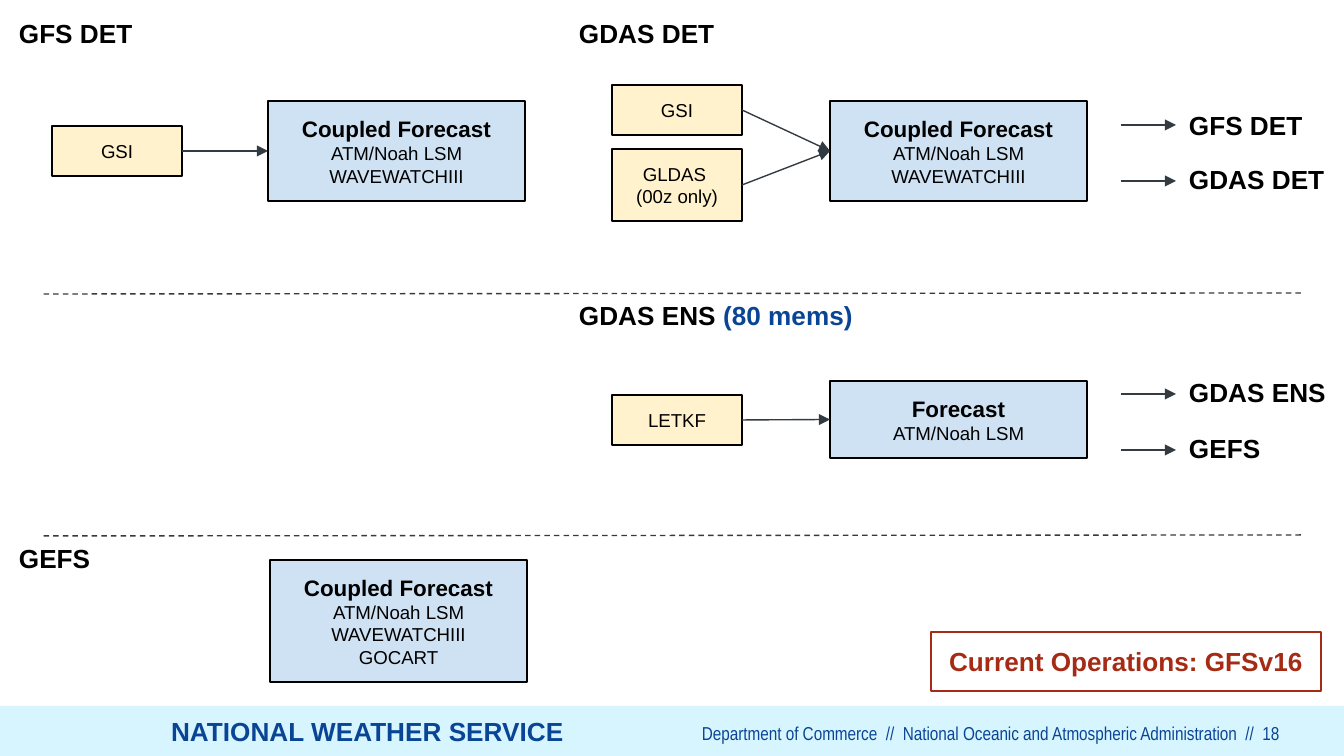
from lxml import etree
from pptx import Presentation
from pptx.dml.color import RGBColor
from pptx.enum.dml import MSO_LINE
from pptx.enum.shapes import MSO_CONNECTOR, MSO_SHAPE
from pptx.enum.text import MSO_ANCHOR, PP_ALIGN
from pptx.oxml.ns import qn
from pptx.util import Pt

EMU_PER_PX = 914400 / 134.4
SLIDE_W, SLIDE_H = 1344, 756
INSET = 13

BLACK = RGBColor(0x00, 0x00, 0x00)
SLATE = RGBColor(0x32, 0x3B, 0x42)
NAVY = RGBColor(0x0A, 0x45, 0x95)
BRICK = RGBColor(0xA5, 0x2B, 0x15)
CREAM = RGBColor(0xFF, 0xF2, 0xCC)
PALE_BLUE = RGBColor(0xCF, 0xE2, 0xF3)
FOOTER_BLUE = RGBColor(0xD6, 0xF5, 0xFF)

HEADING = {"name": "Arial", "size": Pt(14), "bold": True}
MODEL_TITLE = {"name": "Arial", "size": Pt(12), "bold": True}
BODY = {"name": "Arial", "size": Pt(10), "bold": False}
FINE_PRINT = {"name": "Arial Narrow", "size": Pt(10), "bold": False}

LEFT_COLUMN, RIGHT_COLUMN, OUTPUT_COLUMN = 6, 566, 1176
ANALYSIS_W, ANALYSIS_H = 130, 50
MODEL_W = 257
ARROW_START = 1121


def px(length):
    return round(length * EMU_PER_PX)


def write(shape, lines, align=PP_ALIGN.LEFT, anchor=MSO_ANCHOR.TOP, inset=INSET):
    """Fill a shape with lines, each a list of (text, format, colour) runs."""
    frame = shape.text_frame
    layout = {"word_wrap": True, "vertical_anchor": anchor}
    layout |= {f"margin_{side}": px(inset) for side in ("left", "top", "right", "bottom")}
    for key, value in layout.items():
        setattr(frame, key, value)
    for index, line in enumerate(lines):
        paragraph = frame.add_paragraph() if index else frame.paragraphs[0]
        paragraph.alignment = align
        for text, font_format, colour in line:
            run = paragraph.add_run()
            run.text = text
            for key, value in font_format.items():
                setattr(run.font, key, value)
            run.font.color.rgb = colour


def add_text(slide, left, top, width, height, runs, **layout):
    area = slide.shapes.add_textbox(px(left), px(top), px(width), px(height))
    write(area, [runs], **layout)


def add_box(slide, left, top, width, height, fill=None, border=None, weight=0.75, lines=()):
    box = slide.shapes.add_shape(
        MSO_SHAPE.RECTANGLE, px(left), px(top), px(width), px(height))
    box.shadow.inherit = False
    if fill is None:
        box.fill.background()
    else:
        box.fill.solid()
        box.fill.fore_color.rgb = fill
    if border is None:
        box.line.fill.background()
    else:
        box.line.color.rgb = border
        box.line.width = Pt(weight)
    if lines:
        write(box, lines, PP_ALIGN.CENTER, MSO_ANCHOR.MIDDLE)
    return box


def add_analysis(slide, left, top, *lines, height=ANALYSIS_H):
    return add_box(slide, left, top, ANALYSIS_W, height, CREAM, BLACK,
                   lines=[[(line, BODY, BLACK)] for line in lines])


def add_model(slide, left, top, height, title, *components):
    lines = [[(title, MODEL_TITLE, BLACK)]]
    lines += [[(name, BODY, BLACK)] for name in components]
    return add_box(slide, left, top, MODEL_W, height, PALE_BLUE, BLACK, lines=lines)


def add_line(slide, x1, y1, x2, y2):
    line = slide.shapes.add_connector(
        MSO_CONNECTOR.STRAIGHT, px(x1), px(y1), px(x2), px(y2))
    line.line.color.rgb = SLATE
    line.line.width = Pt(0.75)
    etree.SubElement(line._element.spPr, qn("a:effectLst"))
    return line


def add_arrow(slide, x1=0, y1=0, x2=0, y2=0):
    arrow = add_line(slide, x1, y1, x2, y2)
    etree.SubElement(arrow.line._get_or_add_ln(), qn("a:tailEnd"), type="triangle")
    return arrow


def add_flow(slide, source, target):
    """Join the right side of source to the left side of target."""
    arrow = add_arrow(slide)
    arrow.begin_connect(source, 3)
    arrow.end_connect(target, 1)


def add_divider(slide, y):
    divider = add_line(slide, 1301, y, 40, y + 1)
    divider.line.dash_style = MSO_LINE.DASH


def add_heading(slide, left, top, text, note="", width=167):
    runs = [(text, HEADING, BLACK)]
    if note:
        runs.append((note, HEADING, NAVY))
    add_text(slide, left, top, width, 59, runs)


def add_output(slide, label_top, arrow_y, text):
    add_arrow(slide, ARROW_START, arrow_y, OUTPUT_COLUMN, arrow_y)
    add_heading(slide, OUTPUT_COLUMN, label_top, text)


def add_footer(slide):
    add_box(slide, 0, 706, SLIDE_W, 50, FOOTER_BLUE)
    add_text(slide, 158, 702, 535, 68, [("NATIONAL WEATHER SERVICE", HEADING, NAVY)])
    department = ("Department of Commerce  //  National Oceanic and Atmospheric "
                  "Administration  //  18")
    add_text(slide, 215, 722, 1064, 18, [(department, FINE_PRINT, NAVY)],
             align=PP_ALIGN.RIGHT, inset=0)


def main():
    deck = Presentation()
    deck.slide_width, deck.slide_height = px(SLIDE_W), px(SLIDE_H)
    slide = deck.slides.add_slide(deck.slide_layouts[6])
    add_footer(slide)

    for left, top, text in ((LEFT_COLUMN, 4, "GFS DET"), (RIGHT_COLUMN, 4, "GDAS DET"),
                            (LEFT_COLUMN, 529, "GEFS")):
        add_heading(slide, left, top, text)
    add_heading(slide, RIGHT_COLUMN, 286, "GDAS ENS ", "(80 mems)", width=347)
    for y in (293, 535):
        add_divider(slide, y)

    coupled = ("Coupled Forecast", "ATM/Noah LSM", "WAVEWATCHIII")
    gfs_gsi = add_analysis(slide, 52, 126)
    write(gfs_gsi, [[("GSI", BODY, BLACK)]], PP_ALIGN.CENTER, MSO_ANCHOR.MIDDLE)
    gfs_model = add_model(slide, 268, 101, 100, *coupled)
    add_flow(slide, gfs_gsi, gfs_model)

    gdas_gsi = add_analysis(slide, 612, 85, "GSI")
    gldas = add_analysis(slide, 612, 149, "GLDAS ", "(00z only)", height=72)
    gdas_model = add_model(slide, 830, 101, 100, *coupled)
    for source in (gdas_gsi, gldas):
        add_flow(slide, source, gdas_model)

    letkf = add_analysis(slide, 612, 395, "LETKF")
    ensemble_model = add_model(slide, 830, 381, 77, "Forecast", "ATM/Noah LSM")
    add_flow(slide, letkf, ensemble_model)

    add_model(slide, 270, 560, 122, *coupled, "GOCART")

    for label_top, arrow_y, text in ((96, 125, "GFS DET"), (150, 181, "GDAS DET"),
                                     (363, 394, "GDAS ENS"), (419, 450, "GEFS")):
        add_output(slide, label_top, arrow_y, text)

    add_box(slide, 931, 632, 390, 59, border=BRICK, weight=1.5,
            lines=[[("Current Operations: GFSv16", HEADING, BRICK)]])
    deck.save("out.pptx")


if __name__ == "__main__":
    main()
